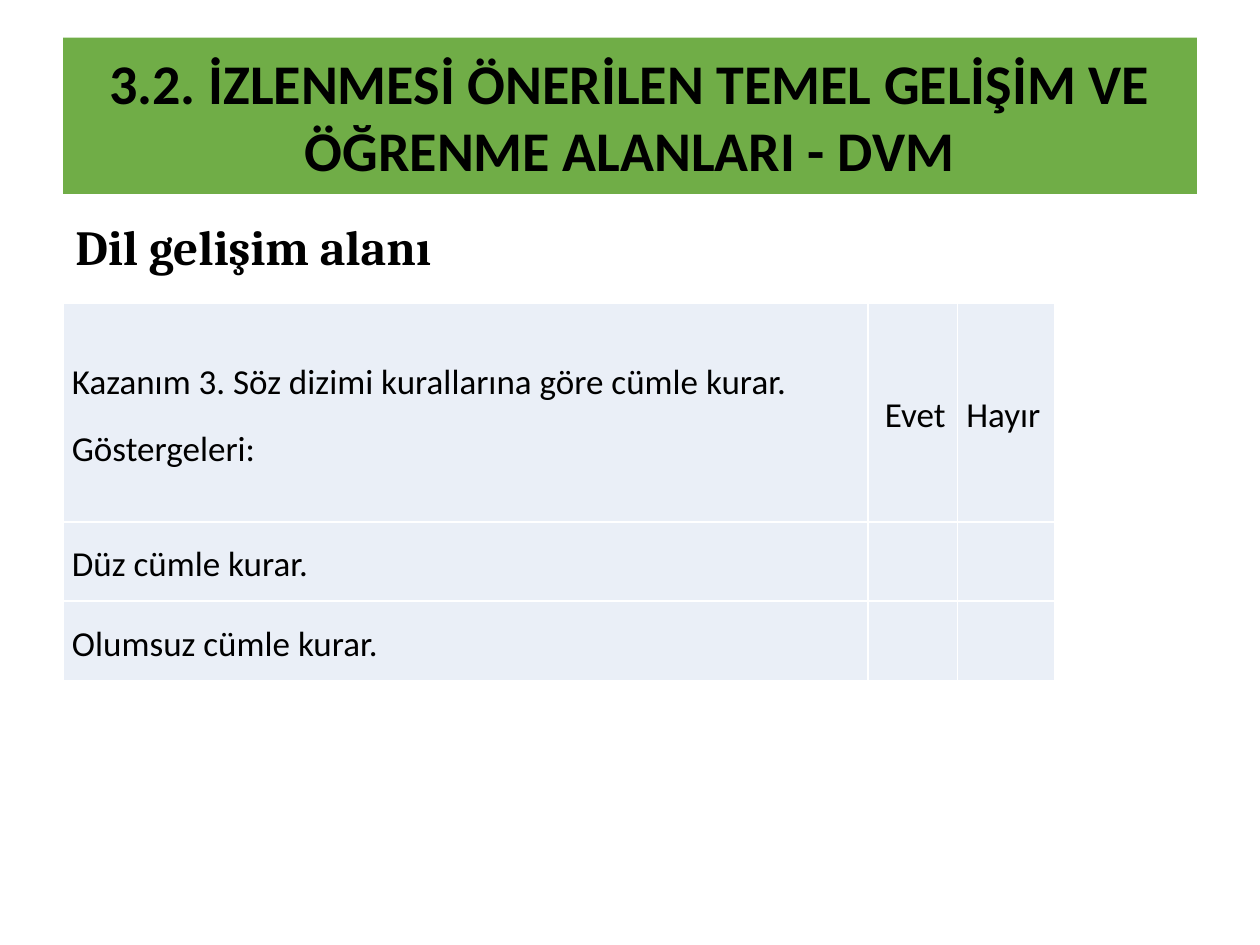
import pptx
import pptx.util
import pptx.dml.color
import pptx.enum.text
import pptx.oxml.ns
import lxml.etree
from pptx.util import Cm

BLACK = pptx.dml.color.RGBColor(0x00, 0x00, 0x00)
WHITE = pptx.dml.color.RGBColor(0xFF, 0xFF, 0xFF)
GREEN = pptx.dml.color.RGBColor(0x70, 0xAD, 0x47)
PALE_BLUE = pptx.dml.color.RGBColor(0xEA, 0xEF, 0xF7)
ALIGN = pptx.enum.text.PP_ALIGN
ANCHOR = pptx.enum.text.MSO_ANCHOR


def write_text(text_frame, text, font="Calibri", size=20, bold=False,
               align=ALIGN.LEFT, line_spacing=1.0, space_after=0):
    text_frame.text = text
    for paragraph in text_frame.paragraphs:
        paragraph.alignment = align
        paragraph.line_spacing = line_spacing
        paragraph.space_after = pptx.util.Pt(space_after)
        for run in paragraph.runs:
            run.font.name = font
            run.font.size = pptx.util.Pt(size)
            run.font.bold = bold
            run.font.color.rgb = BLACK


def add_borders(cell, color, width):
    properties = cell._tc.get_or_add_tcPr()
    for side in ("a:lnL", "a:lnR", "a:lnT", "a:lnB"):
        line = lxml.etree.SubElement(properties, pptx.oxml.ns.qn(side), w=str(width))
        fill = lxml.etree.SubElement(line, pptx.oxml.ns.qn("a:solidFill"))
        lxml.etree.SubElement(fill, pptx.oxml.ns.qn("a:srgbClr"), val=str(color))


presentation = pptx.Presentation()
presentation.slide_width = Cm(25.4)
presentation.slide_height = Cm(19.05)
slide = presentation.slides.add_slide(presentation.slide_layouts[5])
left = Cm(1.27)

# Title band
title = slide.shapes.title
title.left, title.top, title.width, title.height = left, Cm(0.76), Cm(22.86), Cm(3.15)
title.fill.solid()
title.fill.fore_color.rgb = GREEN
title.text_frame.vertical_anchor = ANCHOR.MIDDLE
write_text(title.text_frame,
           "3.2. İZLENMESİ ÖNERİLEN TEMEL GELİŞİM VE ÖĞRENME ALANLARI - DVM",
           size=32, bold=True, align=ALIGN.CENTER)

# Development area heading
heading = slide.shapes.add_textbox(left, Cm(3.96), Cm(15.42), Cm(2.74))
heading.text_frame.word_wrap = True
heading.text_frame.margin_top = Cm(0.4)
heading.text_frame.margin_bottom = 0
write_text(heading.text_frame, "Dil gelişim alanı", font="Cambria", size=28, bold=True)

# Checklist table
rows = [
    ["Kazanım 3. Söz dizimi kurallarına göre cümle kurar.\nGöstergeleri:", " Evet", "Hayır"],
    ["Düz cümle kurar.", "", ""],
    ["Olumsuz cümle kurar.", "", ""],
]
column_widths = [Cm(16.23), Cm(1.8), Cm(1.96)]
row_heights = [Cm(4.4), Cm(1.6), Cm(1.6)]
table = slide.shapes.add_table(len(rows), len(column_widths), left, Cm(6.12),
                               sum(column_widths), sum(row_heights)).table
for column, width in zip(table.columns, column_widths):
    column.width = width
for row, height, texts in zip(table.rows, row_heights, rows):
    row.height = height
    for cell, text in zip(row.cells, texts):
        add_borders(cell, WHITE, pptx.util.Pt(1))
        cell.fill.solid()
        cell.fill.fore_color.rgb = PALE_BLUE
        cell.vertical_anchor = ANCHOR.MIDDLE
        cell.margin_left = cell.margin_right = Cm(0.18)
        cell.margin_top = cell.margin_bottom = 0
        if text:
            write_text(cell.text_frame, text, line_spacing=1.15, space_after=10)

presentation.save("out.pptx")
